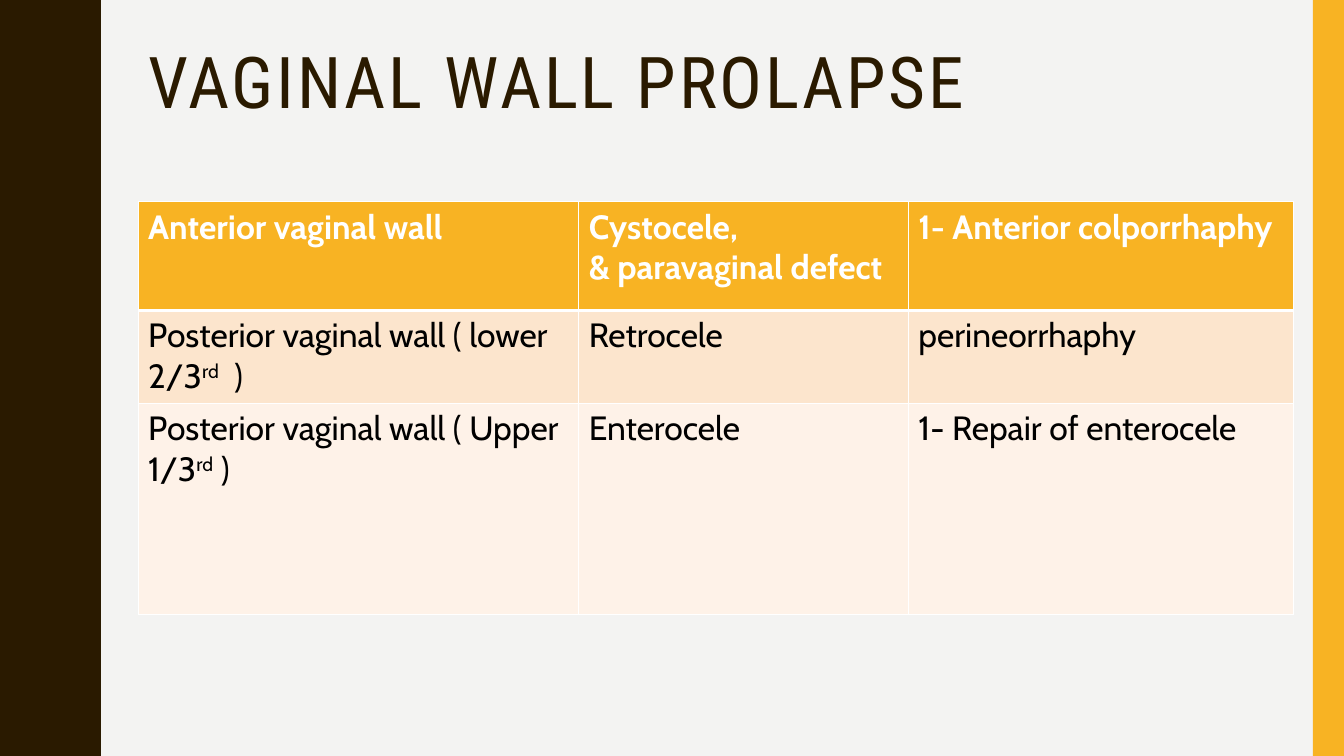
from dataclasses import dataclass

from lxml import etree
from pptx import Presentation
from pptx.dml.color import RGBColor
from pptx.enum.shapes import MSO_SHAPE
from pptx.enum.text import MSO_ANCHOR
from pptx.oxml.ns import qn
from pptx.util import Inches, Pt

RECTANGLE = MSO_SHAPE.RECTANGLE
TOP = MSO_ANCHOR.TOP
BROWN, AMBER, WHITE, BLACK = "2A1A00", "F8B323", "FFFFFF", "000000"
PAPER, PEACH, CREAM = "F3F3F2", "FCE5CD", "FEF2E8"
PAGE_WIDTH, PAGE_HEIGHT = 13.33, 7.5
WAVE_PERIOD, WAVE_COUNT = 1.5, 5
HALF_WAVE = [
    (0.78, 0), (0.78, 0.07), (0.79, 0.14), (0.8, 0.2), (0.81, 0.25),
    (0.83, 0.29), (0.85, 0.33), (0.87, 0.38), (0.89, 0.42), (0.91, 0.46),
    (0.93, 0.5), (0.95, 0.55), (0.96, 0.61), (0.97, 0.68), (0.97, 0.75),
]
COLUMN_WIDTHS = [4.37, 3.27, 3.82]


@dataclass
class Span:
    text: str
    raised: bool = False


@dataclass
class TableRow:
    height: float
    fill: str
    color: str
    bold: bool
    top_line: float
    bottom_line: float
    cells: list[list[list[Span]]]


ROWS = [
    TableRow(1.08, AMBER, WHITE, True, 1, 3, [
        [[Span("Anterior vaginal wall")]],
        [[Span("Cystocele,")], [Span("& paravaginal defect")]],
        [[Span("1- Anterior colporrhaphy")]],
    ]),
    TableRow(0.92, PEACH, BLACK, False, 3, 1, [
        [[Span("Posterior vaginal wall ( lower 2/3"), Span("rd", True), Span("  )")]],
        [[Span("Retrocele")]],
        [[Span("perineorrhaphy")]],
    ]),
    TableRow(2.1, CREAM, BLACK, False, 1, 1, [
        [[Span("Posterior vaginal wall ( Upper 1/3"), Span("rd", True), Span(" )")]],
        [[Span("Enterocele")]],
        [[Span("1- Repair of enterocele")]],
    ]),
]


def rgb(color: str) -> RGBColor:
    return RGBColor.from_string(color)


def paint(shape, color: str) -> None:
    shape.shadow.inherit = False
    shape.fill.solid()
    shape.fill.fore_color.rgb = rgb(color)
    shape.line.fill.background()


def add_span(para, text: str, font: str, size: float, color: str, bold: bool = False):
    span = para.add_run()
    span.text = text
    span.font.name = font
    span.font.size = Pt(size)
    span.font.bold = bold
    span.font.color.rgb = rgb(color)
    return span


def draw_wave(page) -> None:
    falling = [(x, WAVE_PERIOD - y) for x, y in reversed(HALF_WAVE[:-1])]
    wave = HALF_WAVE + falling
    edge = [(x, y + WAVE_PERIOD * turn) for turn in range(WAVE_COUNT) for x, y in wave]
    builder = page.shapes.build_freeform(0, 0, scale=Inches(1))
    builder.add_line_segments(edge + [(0, PAGE_HEIGHT)], close=True)
    paint(builder.convert_to_shape(), BROWN)


def draw_side_bar(page) -> None:
    width = 0.31
    bar = page.shapes.add_shape(
        RECTANGLE, Inches(PAGE_WIDTH - width), 0, Inches(width), Inches(PAGE_HEIGHT)
    )
    paint(bar, AMBER)


def draw_title(page) -> None:
    box = page.shapes.add_textbox(Inches(1.37), Inches(0.42), Inches(11.13), Inches(1.63))
    frame = box.text_frame
    frame.word_wrap = True
    frame.vertical_anchor = TOP
    para = frame.paragraphs[0]
    para.line_spacing = 0.9
    span = add_span(para, "VAGINAL WALL PROLAPSE", "Roboto Condensed", 51, BROWN)
    span.font._element.set("spc", "200")


def set_borders(cell, top: float, bottom: float) -> None:
    properties = cell._tc.get_or_add_tcPr()
    widths = {"a:lnL": 1, "a:lnR": 1, "a:lnT": top, "a:lnB": bottom}
    for position, (tag, width) in enumerate(widths.items()):
        line = etree.Element(qn(tag), w=str(Pt(width)))
        fill = etree.SubElement(line, qn("a:solidFill"))
        etree.SubElement(fill, qn("a:srgbClr"), val=WHITE)
        properties.insert(position, line)


def fill_cell(cell, row: TableRow, paragraphs: list[list[Span]]) -> None:
    cell.fill.solid()
    cell.fill.fore_color.rgb = rgb(row.fill)
    set_borders(cell, row.top_line, row.bottom_line)
    frame = cell.text_frame
    for index, spans in enumerate(paragraphs):
        para = frame.add_paragraph() if index else frame.paragraphs[0]
        for item in spans:
            span = add_span(para, item.text, "Cabin", 24, row.color, row.bold)
            if item.raised:
                span.font._element.set("baseline", "30000")


def draw_table(page) -> None:
    table = page.shapes.add_table(
        len(ROWS), len(COLUMN_WIDTHS), Inches(1.37), Inches(2),
        Inches(sum(COLUMN_WIDTHS)), Inches(sum(row.height for row in ROWS)),
    ).table
    for column, width in zip(table.columns, COLUMN_WIDTHS):
        column.width = Inches(width)
    for row_index, row in enumerate(ROWS):
        table.rows[row_index].height = Inches(row.height)
        for column_index, paragraphs in enumerate(row.cells):
            fill_cell(table.cell(row_index, column_index), row, paragraphs)


def main() -> None:
    deck = Presentation()
    deck.slide_width = Inches(PAGE_WIDTH)
    deck.slide_height = Inches(PAGE_HEIGHT)
    page = deck.slides.add_slide(deck.slide_layouts[6])
    page.background.fill.solid()
    page.background.fill.fore_color.rgb = rgb(PAPER)
    draw_wave(page)
    draw_side_bar(page)
    draw_title(page)
    draw_table(page)
    deck.save("out.pptx")


if __name__ == "__main__":
    main()
